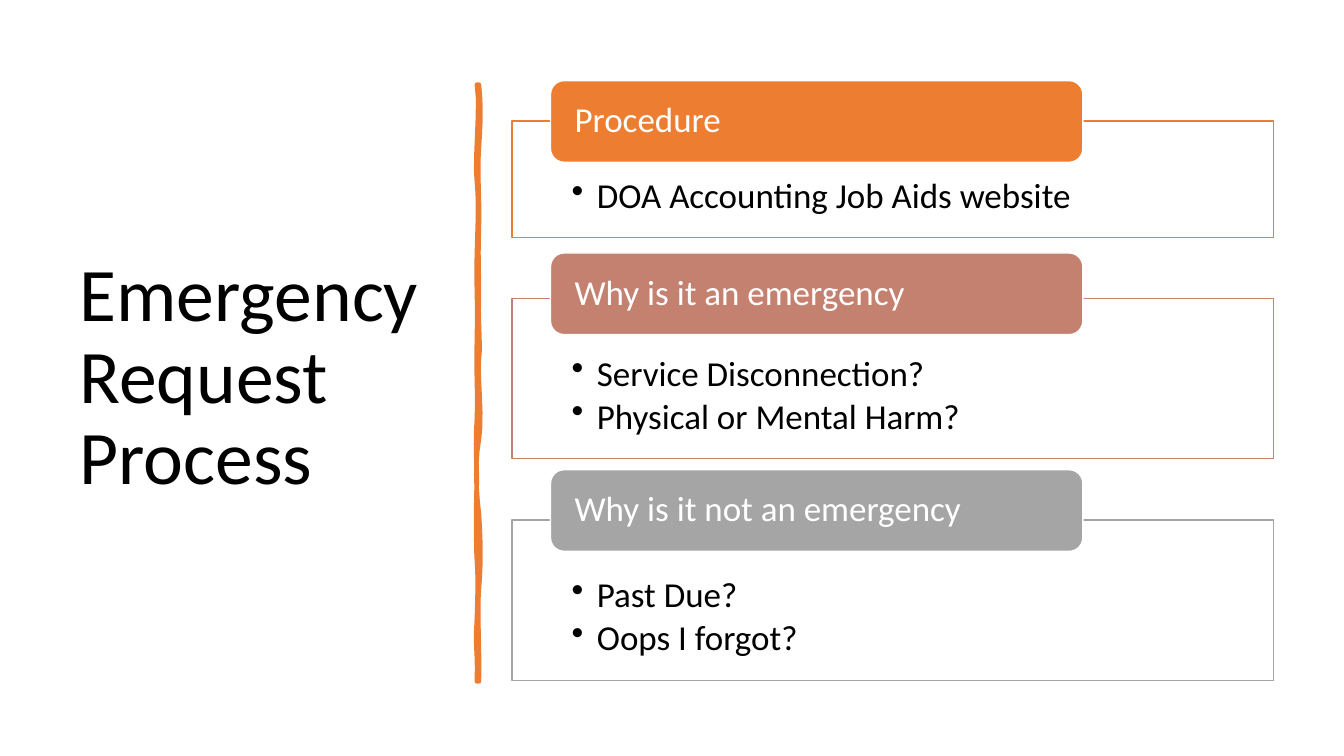
"""Build the emergency request process slide."""
import dataclasses

import pptx
import pptx.dml.color
import pptx.enum.shapes
import pptx.enum.text
import pptx.oxml
import pptx.oxml.ns
import pptx.util

Inches = pptx.util.Inches
Pt = pptx.util.Pt
RGBColor = pptx.dml.color.RGBColor
Anchor = pptx.enum.text.MSO_ANCHOR
Preset = pptx.enum.shapes.MSO_SHAPE

BLACK = RGBColor(0x00, 0x00, 0x00)
WHITE = RGBColor(0xFF, 0xFF, 0xFF)
ORANGE = RGBColor(0xED, 0x7D, 0x31)
ROSE = RGBColor(0xC4, 0x81, 0x70)
GREY = RGBColor(0xA5, 0xA5, 0xA5)

FONT = "Calibri"
PANEL_LEFT, PANEL_WIDTH = 5.08, 7.55
TAB_LEFT, TAB_WIDTH, TAB_HEIGHT = 5.46, 5.28, 0.81
CURVE_STEPS = 6

BAR_START = (4.75, 0.84)
BAR_CURVES = [
    ((4.77, 1.02), (4.77, 1.19), (4.75, 1.46)),
    ((4.73, 1.73), (4.76, 1.95), (4.75, 2.26)),
    ((4.74, 2.57), (4.75, 2.62), (4.75, 2.94)),
    ((4.74, 3.25), (4.77, 3.42), (4.75, 3.56)),
    ((4.73, 3.70), (4.79, 4.14), (4.75, 4.36)),
    ((4.71, 4.57), (4.72, 4.84), (4.75, 5.10)),
    ((4.77, 5.36), (4.77, 5.64), (4.75, 5.84)),
    ((4.73, 6.03), (4.76, 6.50), (4.75, 6.76)),
    ((4.74, 6.76), (4.73, 6.76), (4.73, 6.76)),
    ((4.74, 6.46), (4.71, 6.44), (4.73, 6.13)),
    ((4.74, 5.83), (4.74, 5.70), (4.73, 5.57)),
    ((4.72, 5.44), (4.72, 4.95), (4.73, 4.77)),
    ((4.73, 4.59), (4.71, 4.45), (4.73, 4.15)),
    ((4.74, 3.86), (4.72, 3.73), (4.73, 3.35)),
    ((4.74, 2.98), (4.72, 2.81), (4.73, 2.50)),
    ((4.74, 2.18), (4.75, 2.00), (4.73, 1.81)),
    ((4.70, 1.63), (4.77, 1.04), (4.73, 0.84)),
]


@dataclasses.dataclass(frozen=True)
class Section:
    """One outlined panel with a coloured heading tab."""
    heading: str
    points: tuple[str, ...]
    color: RGBColor
    tab_top: float
    panel_top: float
    panel_height: float


SECTIONS = [
    Section("Procedure", ("DOA Accounting Job Aids website",),
            ORANGE, 0.8, 1.2, 1.16),
    Section("Why is it an emergency",
            ("Service Disconnection?", "Physical or Mental Harm?"),
            ROSE, 2.51, 2.96, 1.59),
    Section("Why is it not an emergency", ("Past Due?", "Oops I forgot?"),
            GREY, 4.66, 5.16, 1.59),
]


def write_text(box, lines: tuple[str, ...], *, size: float, color: RGBColor,
               anchor=Anchor.MIDDLE, insets=(0.1, 0.05, 0.1, 0.05),
               space_after: float = 0, bulleted: bool = False) -> None:
    """Fill a shape with left-aligned paragraphs."""
    frame = box.text_frame
    frame.word_wrap = True
    frame.auto_size = pptx.enum.text.MSO_AUTO_SIZE.NONE
    frame.vertical_anchor = anchor
    (frame.margin_left, frame.margin_top,
     frame.margin_right, frame.margin_bottom) = map(Inches, insets)
    for index, line in enumerate(lines):
        para = frame.add_paragraph() if index else frame.paragraphs[0]
        para.alignment = pptx.enum.text.PP_ALIGN.LEFT
        para.line_spacing = 0.9
        para.space_after = Pt(space_after)
        span = para.add_run()
        span.text = line
        span.font.name = FONT
        span.font.size = Pt(size)
        span.font.color.rgb = color
        if bulleted:
            add_bullet(para)


def add_bullet(para) -> None:
    """Give a paragraph a hanging round bullet."""
    properties = para._p.get_or_add_pPr()
    properties.set("marL", str(Inches(0.25)))
    properties.set("indent", str(Inches(-0.25)))
    bullet = pptx.oxml.parse_xml(
        f'<a:buChar {pptx.oxml.ns.nsdecls("a")} char="•"/>')
    properties.append(bullet)


def paint(shape, fill: RGBColor, line: RGBColor, width: float) -> None:
    """Set a shape's fill and outline without a shadow."""
    shape.shadow.inherit = False
    shape.fill.solid()
    shape.fill.fore_color.rgb = fill
    shape.line.color.rgb = line
    shape.line.width = Pt(width)


def add_box(page, preset, left: float, top: float, width: float,
            height: float, fill: RGBColor, line: RGBColor):
    """Add a painted preset shape."""
    box = page.shapes.add_shape(
        preset, Inches(left), Inches(top), Inches(width), Inches(height))
    paint(box, fill, line, 1)
    return box


def curve_points(start, first, second, end) -> list[tuple[int, int]]:
    """Sample a cubic curve after its starting point."""
    points = []
    for step in range(1, CURVE_STEPS + 1):
        t = step / CURVE_STEPS
        weights = ((1 - t) ** 3, 3 * t * (1 - t) ** 2, 3 * t * t * (1 - t), t ** 3)
        x, y = (sum(weight * value for weight, value in zip(weights, axis))
                for axis in zip(start, first, second, end))
        points.append((Inches(x), Inches(y)))
    return points


def add_wavy_bar(page) -> None:
    """Draw the hand-drawn divider."""
    builder = page.shapes.build_freeform(*map(Inches, BAR_START))
    start = BAR_START
    for curve in BAR_CURVES:
        builder.add_line_segments(curve_points(start, *curve), close=False)
        start = curve[-1]
    builder.add_line_segments([tuple(map(Inches, BAR_START))], close=True)
    paint(builder.convert_to_shape(), ORANGE, ORANGE, 3.25)


def add_section(page, section: Section) -> None:
    """Draw a panel of bullets and its heading tab."""
    panel = add_box(page, Preset.RECTANGLE, PANEL_LEFT, section.panel_top,
                    PANEL_WIDTH, section.panel_height, WHITE, section.color)
    write_text(panel, section.points, size=25, color=BLACK, anchor=Anchor.TOP,
               insets=(0.59, 0.57, 0.59, 0.19), space_after=3.75, bulleted=True)
    tab = add_box(page, Preset.ROUNDED_RECTANGLE, TAB_LEFT, section.tab_top,
                  TAB_WIDTH, TAB_HEIGHT, section.color, WHITE)
    write_text(tab, (section.heading,), size=25, color=WHITE,
               insets=(0.2, 0, 0.2, 0))


def main() -> None:
    """Build and save the deck."""
    deck = pptx.Presentation()
    deck.slide_width, deck.slide_height = Inches(13.33), Inches(7.5)
    page = deck.slides.add_slide(deck.slide_layouts.get_by_name("Title Only"))
    title = page.shapes.title
    title.left, title.top = Inches(0.69), Inches(0.7)
    title.width, title.height = Inches(3.74), Inches(6.11)
    write_text(title, ("Emergency Request Process",), size=54, color=BLACK)
    add_wavy_bar(page)
    for section in SECTIONS:
        add_section(page, section)
    deck.save("out.pptx")


if __name__ == "__main__":
    main()
